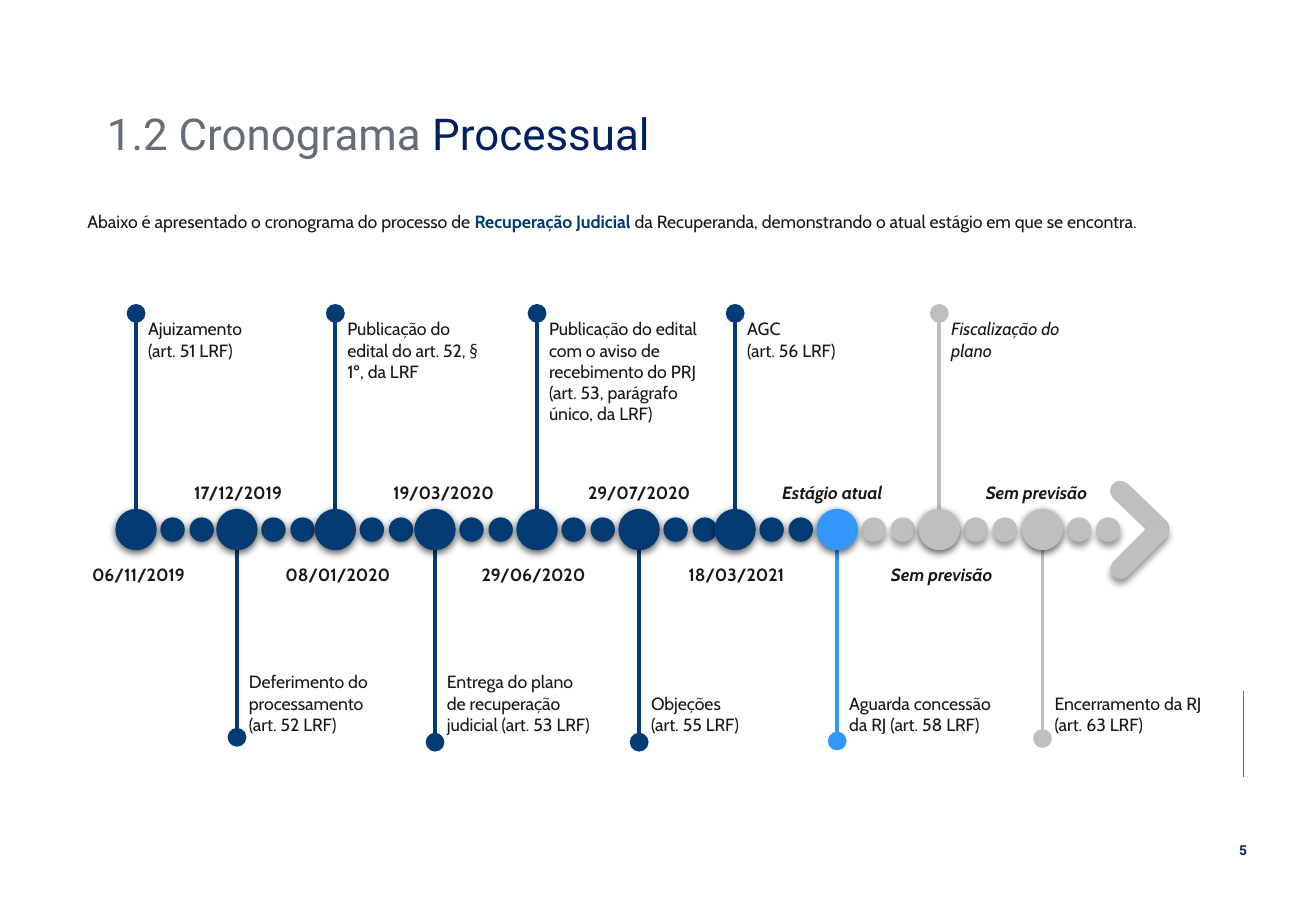
import pptx
import pptx.util
import pptx.dml.color
import pptx.enum.shapes
import pptx.enum.text
import pptx.oxml
import pptx.oxml.ns
from dataclasses import dataclass

Inches, Pt = pptx.util.Inches, pptx.util.Pt
RGBColor = pptx.dml.color.RGBColor
MSO_SHAPE = pptx.enum.shapes.MSO_SHAPE
ANCHOR = pptx.enum.text.MSO_ANCHOR
ALIGN = pptx.enum.text.PP_ALIGN

NAVY = RGBColor(0x03, 0x3C, 0x75)
BRIGHT = RGBColor(0x32, 0x96, 0xFA)
SILVER = RGBColor(0xBF, 0xBF, 0xBF)
INK = RGBColor(0x18, 0x17, 0x17)
SLATE = RGBColor(0x65, 0x6D, 0x78)
DEEP_BLUE = RGBColor(0x00, 0x20, 0x60)

# Shadow: opacity in percent, blur and distance in points
CRISP_SHADOW = (63, 4.5, 1.5)
SOFT_SHADOW = (40, 4, 3)

AXIS = 1.79  # height of the timeline axis below the top of its box
BIG, SMALL = 0.33, 0.19
BEAD_OFFSETS = (0.3, 0.54)


@dataclass
class Milestone:
    x: float
    date: str
    date_x: float
    label: str
    label_width: float
    tip: float  # far end of the stem
    color: RGBColor = NAVY
    date_italic: bool = False
    label_italic: bool = False


# Positions are measured from the top left of the timeline box
MILESTONES = [
    Milestone(0.17, "06/11/2019", 0.19, "Ajuizamento (art. 51 LRF)", 1.11, 0.01),
    Milestone(1.00, "17/12/2019", 1.01, "Deferimento do processamento (art. 52 LRF)", 1.37, 3.5),
    Milestone(1.81, "08/01/2020", 1.83, "Publicação do edital do art. 52, § 1º, da LRF", 1.3, 0.01),
    Milestone(2.63, "19/03/2020", 2.7, "Entrega do plano de recuperação judicial (art. 53 LRF)",
              1.4, 3.54),
    Milestone(3.47, "29/06/2020", 3.44, "Publicação do edital com o aviso de recebimento do PRJ "
              "(art. 53, parágrafo único, da LRF)", 1.56, 0.01),
    Milestone(4.31, "29/07/2020", 4.31, "Objeções\n(art. 55 LRF)", 1.1, 3.54),
    Milestone(5.10, "18/03/2021", 5.11, "AGC\n(art. 56 LRF)", 1.1, 0.01),
    Milestone(5.94, "Estágio atual", 5.9, "Aguarda concessão da RJ (art. 58 LRF)", 1.5, 3.53,
              BRIGHT, date_italic=True),
    Milestone(6.78, "Sem previsão", 6.8, "Fiscalização do plano", 1.1, 0.01,
              SILVER, date_italic=True, label_italic=True),
    Milestone(7.63, "Sem previsão", 7.58, "Encerramento da RJ\n(art. 63 LRF)", 1.58, 3.51,
              SILVER, date_italic=True),
]


def style(font, size, color, name="Cabin", bold=False, italic=False):
    font.name, font.size, font.bold, font.italic = name, Pt(size), bold, italic
    font.color.rgb = color


def add_text(slide, box, text, anchor=ANCHOR.TOP, align=ALIGN.LEFT, **font):
    frame = slide.shapes.add_textbox(*map(Inches, box)).text_frame
    frame.word_wrap = True
    frame.vertical_anchor = anchor
    frame.text = text
    for paragraph in frame.paragraphs:
        paragraph.alignment = align
        style(paragraph.font, **font)
    return frame


def add_line(slide, start, end, color, width, oval_end=False):
    line = slide.shapes.add_connector(pptx.enum.shapes.MSO_CONNECTOR.STRAIGHT,
                                      *map(Inches, start + end))
    line.line.color.rgb = color
    line.line.width = Pt(width)
    if oval_end:
        tail = pptx.oxml.parse_xml(
            f'<a:tailEnd {pptx.oxml.ns.nsdecls("a")} type="oval" w="lg" len="lg"/>')
        line.line._get_or_add_ln().append(tail)
    line._element.spPr.append(
        pptx.oxml.parse_xml(f'<a:effectLst {pptx.oxml.ns.nsdecls("a")}/>'))


def add_solid(slide, kind, center, size, color, shadow):
    left, top = (c - s / 2 for c, s in zip(center, size))
    solid = slide.shapes.add_shape(kind, Inches(left), Inches(top), *map(Inches, size))
    solid.fill.solid()
    solid.fill.fore_color.rgb = color
    solid.line.color.rgb = color
    solid.line.width = Pt(0.75)
    solid.shadow.inherit = False
    if shadow:
        opacity, blur, distance = shadow
        solid._element.spPr.find(pptx.oxml.ns.qn("a:effectLst")).append(pptx.oxml.parse_xml(
            f'<a:outerShdw {pptx.oxml.ns.nsdecls("a")} blurRad="{Pt(blur)}" '
            f'dist="{Pt(distance)}" dir="5400000" rotWithShape="0">'
            f'<a:srgbClr val="000000"><a:alpha val="{opacity * 1000}"/></a:srgbClr>'
            '</a:outerShdw>'))
    return solid


def draw_title(slide, box):
    title = slide.shapes.title
    title.left, title.top, title.width, title.height = map(Inches, box)
    frame = title.text_frame
    frame.auto_size = pptx.enum.text.MSO_AUTO_SIZE.NONE
    frame.vertical_anchor = ANCHOR.MIDDLE
    heading = frame.paragraphs[0]
    heading.alignment = ALIGN.LEFT
    heading.line_spacing = 0.9
    for text, color in (("1.2 Cronograma ", SLATE), ("Processual", DEEP_BLUE)):
        run = heading.add_run()
        run.text = text
        style(run.font, 26, color, "Roboto")


def draw_intro(slide, box):
    frame = add_text(slide, box, "", align=ALIGN.JUSTIFY, size=10.5, color=INK)
    intro = frame.paragraphs[0]
    intro.line_spacing = 1.14
    for text, color, bold in (
            ("Abaixo é apresentado o cronograma do processo de ", INK, False),
            ("Recuperação Judicial ", NAVY, True),
            ("da Recuperanda, demonstrando o atual estágio em que se encontra.", INK, False)):
        run = intro.add_run()
        run.text = text
        style(run.font, 10.5, color, bold=bold)


def draw_timeline(slide, box):
    left, top, width, height = box
    axis = top + AXIS

    # Stems, labels and dates
    for milestone in MILESTONES:
        x = left + milestone.x
        above = milestone.tip < AXIS
        add_line(slide, (x, axis), (x, top + milestone.tip), milestone.color, 2.25, True)
        label_height = 0.98 if above else 0.63
        label_top = top if above else top + height - label_height
        add_text(slide, (x, label_top, milestone.label_width, label_height), milestone.label,
                 ANCHOR.TOP if above else ANCHOR.BOTTOM,
                 size=10.5, color=INK, italic=milestone.label_italic)
        date_top = axis + 0.23 if above else axis - 0.44
        add_text(slide, (left + milestone.date_x - 0.6, date_top, 1.2, 0.28), milestone.date,
                 align=ALIGN.CENTER, size=10.5, color=INK, bold=True,
                 italic=milestone.date_italic)

    # Arrowhead
    for side, angle in ((-1, 43.7), (1, 315)):
        arm = add_solid(slide, MSO_SHAPE.ROUNDED_RECTANGLE,
                        (left + width - 0.3, axis + side * 0.165), (0.6, 0.16), SILVER,
                        SOFT_SHADOW if side > 0 else None)
        arm.adjustments[0] = 0.5
        arm.rotation = angle

    # Beads: a large one per milestone, two small ones after it
    for milestone in MILESTONES:
        x = left + milestone.x
        bead_color = NAVY if milestone.color == NAVY else SILVER
        for offset in BEAD_OFFSETS:
            add_solid(slide, MSO_SHAPE.OVAL, (x + offset, axis), (SMALL, SMALL), bead_color,
                      CRISP_SHADOW if bead_color == NAVY else SOFT_SHADOW)
        add_solid(slide, MSO_SHAPE.OVAL, (x, axis), (BIG, BIG), milestone.color, CRISP_SHADOW)


def draw_page_mark(slide, box):
    left, top, width, height = box
    center = left + width / 2
    add_line(slide, (center, top), (center, top + 0.71), SLATE, 0.5)
    add_text(slide, (left, top + height - 0.24, width, 0.24), "5", align=ALIGN.CENTER,
             size=8.1, color=DEEP_BLUE, name="Roboto", bold=True)


def main():
    deck = pptx.Presentation()
    deck.slide_width, deck.slide_height = Inches(10.83), Inches(7.5)
    slide = deck.slides.add_slide(deck.slide_layouts.get_by_name("Title Only"))
    draw_page_mark(slide, (10.06, 5.69, 0.34, 1.43))
    draw_title(slide, (0.78, 0.86, 8.18, 0.53))
    draw_intro(slide, (0.62, 1.66, 9.86, 0.3))
    draw_timeline(slide, (0.95, 2.57, 8.73, 3.53))
    deck.save("out.pptx")


if __name__ == "__main__":
    main()
